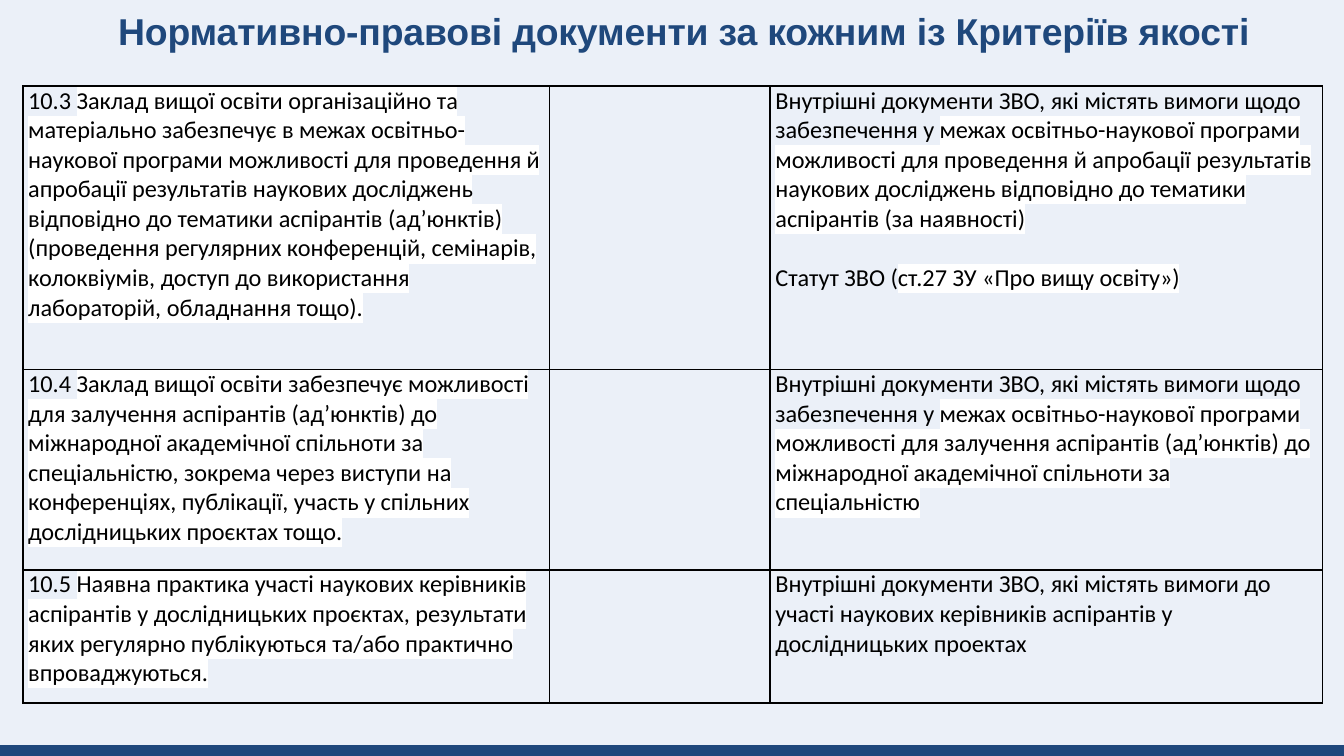
from dataclasses import dataclass

from lxml import etree
from pptx import Presentation
from pptx.dml.color import RGBColor
from pptx.enum.shapes import MSO_SHAPE
from pptx.enum.text import PP_ALIGN
from pptx.oxml.ns import qn
from pptx.util import Inches, Pt

RECTANGLE = MSO_SHAPE.RECTANGLE
CENTER = PP_ALIGN.CENTER

PALE_BLUE = RGBColor(0xEB, 0xF0, 0xF8)
NAVY = RGBColor(0x1F, 0x48, 0x7C)
BLACK = RGBColor(0x00, 0x00, 0x00)
WHITE = RGBColor(0xFF, 0xFF, 0xFF)

SLIDE_WIDTH = 10
SLIDE_HEIGHT = SLIDE_WIDTH * 9 / 16
FOOTER_HEIGHT = 0.08
COLUMN_WIDTHS = (3.92, 1.64, 4.11)
BORDER_WIDTH = Pt(1)
BLANK_LAYOUT = 6


@dataclass(frozen=True)
class Passage:
    """A paragraph: a plain opening, then a highlighted remainder."""
    plain: str
    marked: str = ""
    space_before: float = 0


@dataclass(frozen=True)
class Criterion:
    height: float
    requirement: Passage
    documents: tuple[Passage, ...]


PROVISION = "Внутрішні документи ЗВО, які містять вимоги щодо забезпечення у "

CRITERIA = (
    Criterion(
        2.11,
        Passage("10.3 ", "Заклад вищої освіти організаційно та матеріально забезпечує в межах "
                "освітньо-наукової програми можливості для проведення й апробації результатів "
                "наукових досліджень відповідно до тематики аспірантів (ад’юнктів) (проведення "
                "регулярних конференцій, семінарів, колоквіумів, доступ до використання "
                "лабораторій, обладнання тощо)."),
        (Passage(PROVISION, "межах освітньо-наукової програми можливості для проведення й "
                 "апробації результатів наукових досліджень відповідно до тематики аспірантів "
                 "(за наявності)"),
         Passage("Статут ЗВО (", "ст.27 ЗУ «Про вищу освіту»)", space_before=16)),
    ),
    Criterion(
        1.49,
        Passage("10.4 ", "Заклад вищої освіти забезпечує можливості для залучення аспірантів "
                "(ад’юнктів) до міжнародної академічної спільноти за спеціальністю, зокрема "
                "через виступи на конференціях, публікації, участь у спільних дослідницьких "
                "проєктах тощо."),
        (Passage(PROVISION, "межах освітньо-наукової програми можливості для залучення "
                 "аспірантів (ад’юнктів) до міжнародної академічної спільноти за "
                 "спеціальністю"),),
    ),
    Criterion(
        0.99,
        Passage("10.5 ", "Наявна практика участі наукових керівників аспірантів у дослідницьких "
                "проєктах, результати яких регулярно публікуються та/або практично "
                "впроваджуються."),
        (Passage("Внутрішні документи ЗВО, які містять вимоги до участі наукових керівників "
                 "аспірантів у дослідницьких проектах"),),
    ),
)


def add_band(slide, top: float, height: float, color: RGBColor) -> None:
    band = slide.shapes.add_shape(
        RECTANGLE, 0, Inches(top), Inches(SLIDE_WIDTH), Inches(height))
    band.shadow.inherit = False
    band.fill.solid()
    band.fill.fore_color.rgb = color
    band.line.fill.background()


def add_title(slide, wording: str) -> None:
    title = slide.shapes.add_textbox(Inches(0.42), Inches(0.05), Inches(9.33), Inches(0.35))
    frame = title.text_frame
    frame.word_wrap = True
    frame.margin_left = frame.margin_right = frame.margin_bottom = 0
    frame.margin_top = Inches(0.01)
    frame.text = wording
    paragraph = frame.paragraphs[0]
    paragraph.alignment = CENTER
    font = paragraph.runs[0].font
    font.name, font.size, font.bold = "Arial", Pt(20), True
    font.color.rgb = NAVY
    paragraph.runs[0]._r.get_or_add_rPr().set("spc", "-10")


def add_color(parent, color: RGBColor) -> None:
    etree.SubElement(parent, qn("a:srgbClr"), val=str(color))


def add_run(paragraph, wording: str, marked: bool) -> None:
    run = paragraph.add_run()
    run.text = wording
    run.font.name, run.font.size = "Calibri", Pt(13)
    run.font.color.rgb = BLACK
    if marked:
        # The highlight must follow the text fill
        highlight = etree.Element(qn("a:highlight"))
        add_color(highlight, WHITE)
        run._r.get_or_add_rPr().find(qn("a:solidFill")).addnext(highlight)


def style_cell(cell) -> None:
    cell.margin_left = cell.margin_right = Inches(0.04)
    cell.margin_top = cell.margin_bottom = 0
    properties = cell._tc.get_or_add_tcPr()
    for side in ("a:lnL", "a:lnR", "a:lnT", "a:lnB"):
        border = etree.SubElement(properties, qn(side), w=str(BORDER_WIDTH))
        add_color(etree.SubElement(border, qn("a:solidFill")), BLACK)
    cell.fill.background()


def write_passages(cell, passages: tuple[Passage, ...]) -> None:
    frame = cell.text_frame
    for index, passage in enumerate(passages):
        paragraph = frame.add_paragraph() if index else frame.paragraphs[0]
        paragraph.space_before = Pt(passage.space_before)
        add_run(paragraph, passage.plain, marked=False)
        if passage.marked:
            add_run(paragraph, passage.marked, marked=True)


def add_criteria_table(slide, criteria: tuple[Criterion, ...]) -> None:
    table = slide.shapes.add_table(
        len(criteria), len(COLUMN_WIDTHS), Inches(0.17), Inches(0.64),
        Inches(sum(COLUMN_WIDTHS)), Inches(sum(c.height for c in criteria))).table
    table.first_row = table.horz_banding = False
    for column, width in zip(table.columns, COLUMN_WIDTHS):
        column.width = Inches(width)
    for row, criterion in zip(table.rows, criteria):
        row.height = Inches(criterion.height)
        for cell in row.cells:
            style_cell(cell)
        write_passages(row.cells[0], (criterion.requirement,))
        write_passages(row.cells[2], criterion.documents)


def main() -> None:
    presentation = Presentation()
    presentation.slide_width = Inches(SLIDE_WIDTH)
    presentation.slide_height = Inches(SLIDE_HEIGHT)
    slide = presentation.slides.add_slide(presentation.slide_layouts[BLANK_LAYOUT])

    # Backdrop and footer strip
    add_band(slide, 0, SLIDE_HEIGHT, PALE_BLUE)
    add_band(slide, SLIDE_HEIGHT - FOOTER_HEIGHT, FOOTER_HEIGHT, NAVY)

    # Title and criteria
    add_title(slide, "Нормативно-правові документи за кожним із Критеріїв якості")
    add_criteria_table(slide, CRITERIA)

    presentation.save("out.pptx")


if __name__ == "__main__":
    main()
